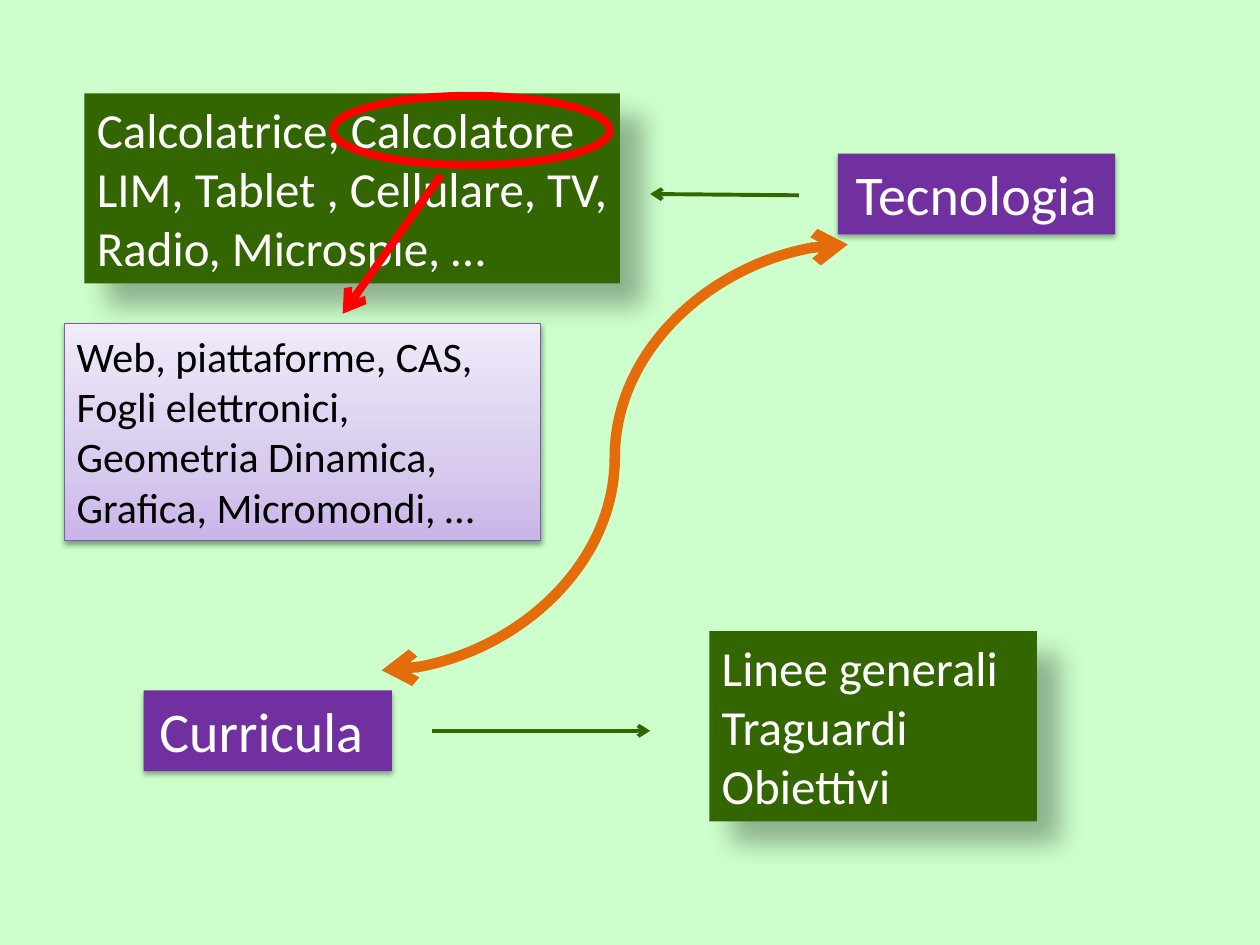
from dataclasses import dataclass
from typing import NamedTuple

from lxml import etree
from pptx import Presentation
from pptx.dml.color import RGBColor
from pptx.enum.shapes import MSO_CONNECTOR, MSO_SHAPE
from pptx.enum.text import MSO_ANCHOR, MSO_AUTO_SIZE, PP_ALIGN
from pptx.oxml.ns import qn
from pptx.util import Inches, Pt

RECT, OVAL = MSO_SHAPE.RECTANGLE, MSO_SHAPE.OVAL
STRAIGHT, CURVE = MSO_CONNECTOR.STRAIGHT, MSO_CONNECTOR.CURVE
LEFT, CENTER = PP_ALIGN.LEFT, PP_ALIGN.CENTER
TOP, FIT = MSO_ANCHOR.TOP, MSO_AUTO_SIZE.SHAPE_TO_FIT_TEXT

COLS, ROWS = 10, 7.5
CELL = Inches(1)  # one column or row of the slide grid


class Shade(NamedTuple):
    alpha: int
    blur: float
    dist: float
    angle: int


@dataclass(frozen=True)
class Theme:
    font: str = "Calibri"
    back: str = "CCFFCC"
    white: str = "FFFFFF"
    black: str = "000000"
    purple: str = "7030A0"
    green: str = "336600"
    orange: str = "E46C0A"
    red: str = "FF0000"
    edge: str = "7D60A0"
    lilac: tuple = ((0, "C9B5E8"), (35, "D8CBEE"), (100, "F0EAF9"))
    topic: int = 32
    list: int = 28
    detail: int = 24
    thin: float = 2.25
    bold: float = 4.5
    heavy: float = 6


THEME = Theme()


@dataclass(frozen=True)
class Style:
    fill: str | tuple
    ink: str
    size: int
    shade: Shade
    align: PP_ALIGN = LEFT
    edge: str | None = None


@dataclass(frozen=True)
class Box:
    area: tuple[float, float, float, float]
    style: Style
    lines: tuple[str, ...]


@dataclass(frozen=True)
class Arrow:
    start: tuple[float, float]
    end: tuple[float, float]
    color: str
    width: float
    kind: MSO_CONNECTOR = STRAIGHT
    both: bool = False


TOPIC = Style(THEME.purple, THEME.white, THEME.topic, Shade(35, 3.1, 1.8, 90), CENTER)
LIST = Style(THEME.green, THEME.white, THEME.list, Shade(30, 15, 18, 45))
DETAIL = Style(THEME.lilac, THEME.black, THEME.detail, Shade(38, 3.1, 1.6, 90),
               edge=THEME.edge)

ITEMS = (
    Box((6.65, 1.22, 2.2, 0.64), TOPIC, ("Tecnologia ",)),
    Box((1.14, 5.48, 1.97, 0.64), TOPIC, ("Curricula ",)),
    Arrow((6.73, 1.94), (3.03, 5.32), THEME.orange, THEME.heavy, CURVE, True),
    Box((0.67, 0.74, 4.25, 1.51), LIST,
        ("Calcolatrice, Calcolatore",
         "LIM, Tablet , Cellulare, TV, Radio, Microspie, …")),
    Box((5.63, 5.01, 2.6, 1.51), LIST, ("Linee generali", "Traguardi", "Obiettivi")),
    Arrow((3.43, 5.8), (5.16, 5.8), THEME.green, THEME.thin),
    Arrow((6.34, 1.55), (5.16, 1.54), THEME.green, THEME.thin),
)
RING = (2.64, 0.76, 2.2, 0.55)
POINTER = Arrow((3.5, 1.39), (2.72, 2.49), THEME.red, THEME.bold)
TOOLS = Box((0.51, 2.57, 3.78, 1.72), DETAIL,
            ("Web, piattaforme, CAS, Fogli elettronici, Geometria Dinamica, "
             "Grafica, Micromondi, …",))


def rgb(code: str) -> RGBColor:
    return RGBColor.from_string(code)


def grid(*spans: float) -> list[int]:
    return [round(span * CELL) for span in spans]


def node(parent, tag: str, **attrs):
    return etree.SubElement(parent, qn(tag), {k: str(v) for k, v in attrs.items()})


def stroke(line, color: str, width: float) -> None:
    line.color.rgb = rgb(color)
    line.width = Pt(width)


def paint(shape, fill: str | tuple) -> None:
    """Fill with one colour, or with gradient stops running upwards."""
    if isinstance(fill, str):
        shape.fill.solid()
        shape.fill.fore_color.rgb = rgb(fill)
        return
    shape.fill.gradient()
    shape.fill.gradient_angle = 90
    stops = shape._element.spPr.find(".//" + qn("a:gsLst"))
    for old in list(stops):
        stops.remove(old)
    for share, color in fill:
        node(node(stops, "a:gs", pos=share * 1000), "a:srgbClr", val=color)


def cast(shape, shade: Shade) -> None:
    """Give the shape an outer shadow."""
    shape.shadow.inherit = False
    effects = shape._element.spPr.find(qn("a:effectLst"))
    outer = node(effects, "a:outerShdw", blurRad=Pt(shade.blur), dist=Pt(shade.dist),
                 dir=shade.angle * 60000, algn="tl", rotWithShape=0)
    node(node(outer, "a:srgbClr", val=THEME.black), "a:alpha", val=shade.alpha * 1000)


def draw_box(slide, box: Box) -> None:
    style = box.style
    shape = slide.shapes.add_shape(RECT, *grid(*box.area))
    paint(shape, style.fill)
    if style.edge:
        stroke(shape.line, style.edge, 0.75)
    else:
        shape.line.fill.background()
    cast(shape, style.shade)
    frame = shape.text_frame
    frame.word_wrap = True
    frame.auto_size = FIT
    frame.vertical_anchor = TOP
    frame.text = "\n".join(box.lines)
    for para in frame.paragraphs:
        para.alignment = style.align
        para.font.name = THEME.font
        para.font.size = Pt(style.size)
        para.font.color.rgb = rgb(style.ink)


def draw_arrow(slide, arrow: Arrow) -> None:
    link = slide.shapes.add_connector(arrow.kind, *grid(*arrow.start, *arrow.end))
    stroke(link.line, arrow.color, arrow.width)
    props = link._element.spPr
    line = props.find(qn("a:ln"))
    if arrow.both:
        node(line, "a:headEnd", type="arrow")
    node(line, "a:tailEnd", type="arrow")
    node(props, "a:effectLst")


def draw_ring(slide, area: tuple[float, float, float, float]) -> None:
    ring = slide.shapes.add_shape(OVAL, *grid(*area))
    ring.fill.background()
    stroke(ring.line, THEME.red, THEME.bold)
    ring.shadow.inherit = False


def main() -> None:
    deck = Presentation()
    deck.slide_width, deck.slide_height = grid(COLS, ROWS)
    slide = deck.slides.add_slide(deck.slide_layouts[6])
    slide.background.fill.solid()
    slide.background.fill.fore_color.rgb = rgb(THEME.back)
    for item in ITEMS:
        if isinstance(item, Box):
            draw_box(slide, item)
        else:
            draw_arrow(slide, item)
    draw_ring(slide, RING)
    draw_arrow(slide, POINTER)
    draw_box(slide, TOOLS)
    deck.save("out.pptx")


if __name__ == "__main__":
    main()
